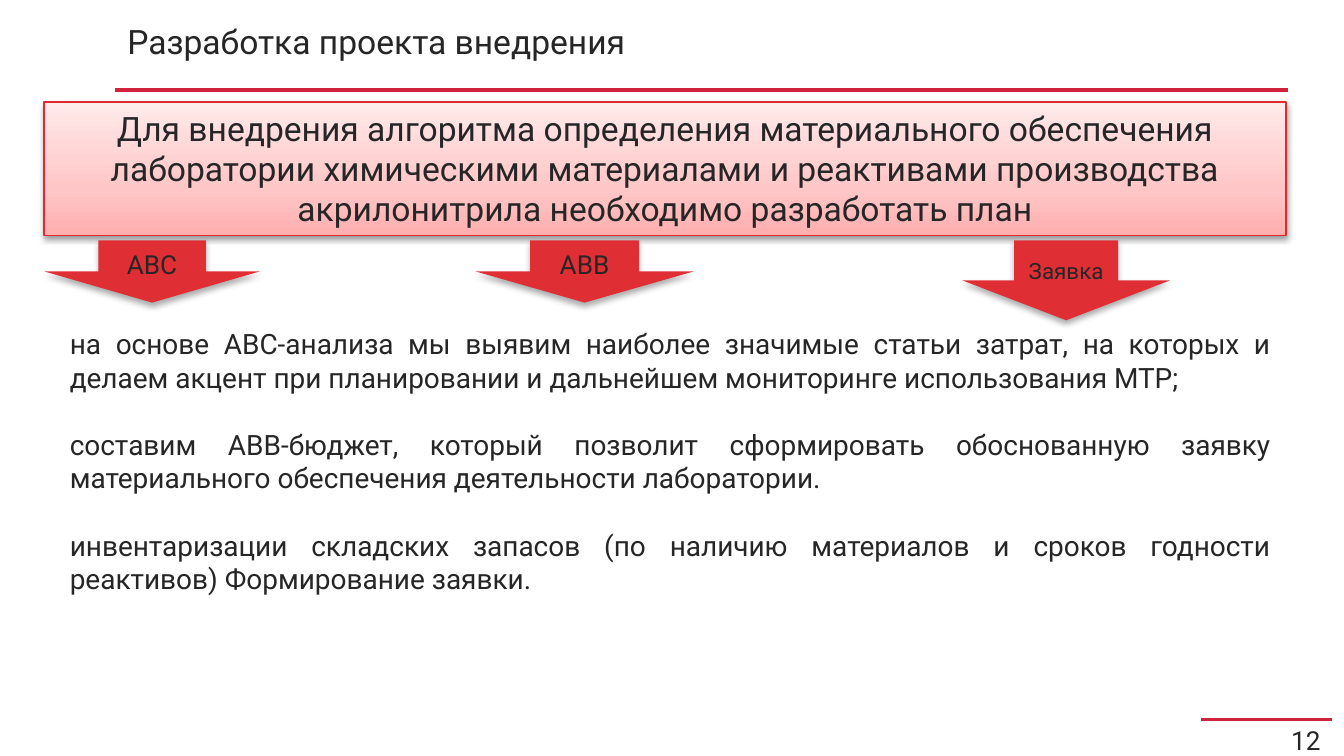
from lxml import etree
from pptx import Presentation
from pptx.dml.color import RGBColor
from pptx.enum.shapes import MSO_CONNECTOR, MSO_SHAPE
from pptx.enum.text import MSO_ANCHOR, PP_ALIGN
from pptx.oxml import parse_xml
from pptx.oxml.ns import nsdecls, qn
from pptx.util import Pt

LINE = MSO_CONNECTOR.STRAIGHT
RECT, ARROW = MSO_SHAPE.RECTANGLE, MSO_SHAPE.DOWN_ARROW
TOP, MIDDLE = MSO_ANCHOR.TOP, MSO_ANCHOR.MIDDLE
LEFT, CENTER, RIGHT, JUSTIFY = (
    PP_ALIGN.LEFT, PP_ALIGN.CENTER, PP_ALIGN.RIGHT, PP_ALIGN.JUSTIFY)

COLORS = {"text": "262626", "rule": "D2233C", "edge": "DE2A30",
          "arrow": "DF2F35", "shade": "000000"}
BLUSH = {0: "FFAFB0", 35: "FFC6C7", 100: "FFEAEA"}


def rgb(name):
    return RGBColor.from_string(COLORS[name])


class Deck:
    """Hold the style and the current slide, and draw each kind of element."""

    font = "Roboto"
    inset = (6.48, 2.88)

    def __init__(self, slide):
        self.slide = slide

    def label(self, shape, texts, size, align, anchor=TOP, inset=inset,
              gap=0, pitch=None):
        frame = shape.text_frame
        frame.word_wrap = True
        frame.vertical_anchor = anchor
        frame.margin_left = frame.margin_right = Pt(inset[0])
        frame.margin_top = frame.margin_bottom = Pt(inset[1])
        for i, text in enumerate(texts):
            para = frame.add_paragraph() if i else frame.paragraphs[0]
            para.text = text
            para.alignment = align
            if i:
                para.space_before = Pt(gap)
            if pitch:
                para.line_spacing = pitch
            para.font.name = self.font
            para.font.size = Pt(size)
            para.font.color.rgb = rgb("text")

    def text(self, box, texts, size, align, **style):
        shape = self.slide.shapes.add_textbox(*map(Pt, box))
        self.label(shape, texts, size, align, **style)

    def rule(self, start, end, y, width):
        line = self.slide.shapes.add_connector(
            LINE, Pt(start), Pt(y), Pt(end), Pt(y))
        line.line.color.rgb = rgb("rule")
        line.line.width = Pt(width)
        etree.SubElement(line._element.spPr, qn("a:effectLst"))

    def shade(self, shape, blur, dist, alpha):
        shape.shadow.inherit = False
        effects = shape._element.spPr.find(qn("a:effectLst"))
        effects.append(parse_xml(
            f'<a:outerShdw {nsdecls("a")} blurRad="{Pt(blur)}" '
            f'dist="{Pt(dist)}" dir="5400000" rotWithShape="0">'
            f'<a:srgbClr val="{COLORS["shade"]}">'
            f'<a:alpha val="{alpha * 1000}"/></a:srgbClr></a:outerShdw>'))

    def banner(self, box, text, size):
        shape = self.slide.shapes.add_shape(RECT, *map(Pt, box))
        stops = "".join(
            f'<a:gs pos="{pos * 1000}"><a:srgbClr val="{color}"/></a:gs>'
            for pos, color in BLUSH.items())
        geom = shape._element.spPr.find(qn("a:prstGeom"))
        geom.addnext(parse_xml(
            f'<a:gradFill {nsdecls("a")} rotWithShape="1"><a:gsLst>{stops}'
            f'</a:gsLst><a:lin ang="16200000" scaled="0"/></a:gradFill>'))
        shape.line.color.rgb = rgb("edge")
        shape.line.width = Pt(0.75)
        self.shade(shape, 3.1, 1.6, 38)
        self.label(shape, [text], size, CENTER)

    def arrow(self, box, text, size):
        shape = self.slide.shapes.add_shape(ARROW, *map(Pt, box))
        shape.fill.solid()
        shape.fill.fore_color.rgb = rgb("arrow")
        shape.line.fill.background()
        self.shade(shape, 3.5, 2.2, 32)
        self.label(shape, [text], size, CENTER, anchor=MIDDLE)


def main():
    show = Presentation()
    show.slide_width, show.slide_height = Pt(720), Pt(405)
    deck = Deck(show.slides.add_slide(show.slide_layouts[6]))

    deck.rule(643.5, 713.5, 385.3, 1.5)
    deck.text((643.5, 385.3, 70.5, 16.5), ["12"], 14, RIGHT)
    deck.rule(61.7, 690, 48.2, 2.25)
    deck.text((61.7, 10.8, 581, 33.8), ["Разработка проекта внедрения"],
              18, LEFT, pitch=0.9)

    deck.banner(
        (23.7, 54.7, 665.3, 71.5),
        "Для внедрения алгоритма определения материального обеспечения "
        "лаборатории химическими материалами и реактивами производства "
        "акрилонитрила необходимо разработать план", 18)

    for left, width, height, text, size in (
            (23.9, 115.2, 33.3, "АВС", 14),
            (254.9, 116.6, 33.3, "АВВ", 14),
            (515.5, 111.4, 42.8, "Заявка", 12)):
        deck.arrow((left, 128.8, width, height), text, size)

    deck.text((30.3, 171.4, 658, 152.6), [
        "на основе АВС-анализа мы выявим наиболее значимые статьи затрат, "
        "на которых и делаем акцент при планировании и дальнейшем "
        "мониторинге использования МТР;",
        "составим АВВ-бюджет, который позволит сформировать обоснованную "
        "заявку материального обеспечения деятельности лаборатории.",
        "инвентаризации складских запасов (по наличию материалов и сроков "
        "годности реактивов) Формирование заявки.",
    ], 15, JUSTIFY, inset=(7.2, 3.6), gap=18)

    show.save("out.pptx")


if __name__ == "__main__":
    main()
